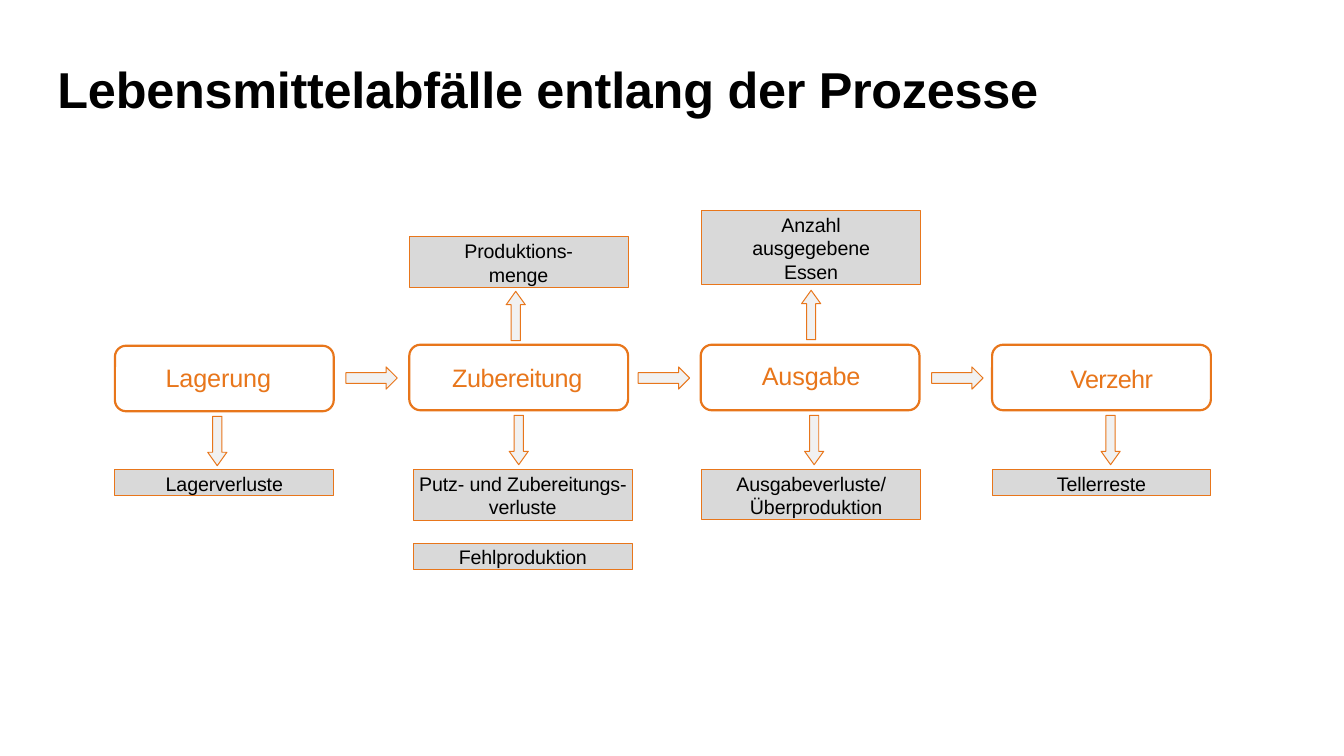
"""Builds a slide on food waste along the kitchen processes."""
from pptx import Presentation
from pptx.dml.color import RGBColor
from pptx.enum.shapes import MSO_SHAPE
from pptx.enum.text import MSO_ANCHOR, PP_ALIGN
from pptx.util import Inches, Pt

ORANGE, GREY, PALE, BLACK = "E8761B", "D9D9D9", "F1F1F1", "000000"
TITLE = "Lebensmittelabfälle entlang der Prozesse"
STEP_WIDTH, STEP_HEIGHT = 2.17, 0.65
STEPS = [
    {"left": 1.14, "top": 3.43, "name": "Lagerung", "label": (1.58, 3.57, 1.15), "spacing": -10},
    {"left": 4.06, "top": 3.42, "name": "Zubereitung", "label": (4.38, 3.57, 1.48), "spacing": -30},
    {"left": 6.95, "top": 3.42, "name": "Ausgabe", "label": (7.5, 3.55, 1.07), "spacing": -10},
    {"left": 9.84, "top": 3.42, "name": "Verzehr", "label": (10.54, 3.58, 0.95), "spacing": -50},
]
NO_INDENT = (0, 0, 0)
NOTES = [
    (1.14, 4.66, 0.26, 1.8, [("Lagerverluste", NO_INDENT)]),
    (4.06, 2.35, 0.5, 1.8, [("Produktions-\nmenge", NO_INDENT)]),
    (4.1, 4.66, 0.5, 1.8, [("Putz- und Zubereitungs-verluste", NO_INDENT)]),
    (4.1, 5.39, 0.26, 1.8, [("Fehlproduktion", NO_INDENT)]),
    (6.96, 2.09, 0.73, 1.6, [("Anzahl", NO_INDENT), ("ausgegebene Essen", (0.4, 0.4, 0))]),
    (6.96, 4.66, 0.49, 1.6, [("Ausgabeverluste/ Überproduktion", (0.3, 0.2, -0.1))]),
    (9.84, 4.66, 0.26, 1.8, [("Tellerreste", NO_INDENT)]),
]
ARROWS = [
    (MSO_SHAPE.RIGHT_ARROW, 0.51, 0.22, 0.5, [(3.43, 3.64), (6.33, 3.64), (9.24, 3.64)]),
    (MSO_SHAPE.DOWN_ARROW, 0.19, 0.49, 0.7,
     [(2.06, 4.13), (5.05, 4.12), (7.98, 4.12), (10.92, 4.12)]),
    (MSO_SHAPE.UP_ARROW, 0.19, 0.49, 0.7, [(5.02, 2.89), (7.95, 2.88)]),
]


def color(value):
    """Turn a hex string into a colour."""
    return RGBColor.from_string(value)


def apply(target, values):
    """Set every attribute in a dict of format values."""
    for name, value in values.items():
        setattr(target, name, value)


def add_shape(page, kind, area, fill, weight):
    """Add an orange-outlined shape without a shadow."""
    shape = page.shapes.add_shape(kind, *map(Inches, area))
    shape.shadow.inherit = False
    if fill:
        shape.fill.solid()
        shape.fill.fore_color.rgb = color(fill)
    else:
        shape.fill.background()
    shape.line.color.rgb = color(ORANGE)
    shape.line.width = Pt(weight)
    return shape


def write(box, lines, size, ink, spacing, before=0, inset=0.02, bold=False,
          align=PP_ALIGN.CENTER):
    """Write paragraphs, each with its left, right and first-line indent."""
    frame = box.text_frame
    apply(frame, {"word_wrap": True, "vertical_anchor": MSO_ANCHOR.TOP,
                  "margin_left": 0, "margin_right": 0,
                  "margin_top": Inches(inset), "margin_bottom": 0})
    for index, (text, indents) in enumerate(lines):
        para = frame.add_paragraph() if index else frame.paragraphs[0]
        para.text = text
        apply(para, {"alignment": align, "space_before": Pt(0 if index else before)})
        for name, indent in zip(("marL", "marR", "indent"), indents):
            para._p.get_or_add_pPr().set(name, str(Inches(indent)))
        for span in para.runs:
            apply(span.font, {"name": "Arial", "size": Pt(size), "bold": bold})
            span.font.color.rgb = color(ink)
            span._r.get_or_add_rPr().set("spc", str(spacing))


def add_text(page, area, *content, **values):
    """Add a text box and write into it."""
    write(page.shapes.add_textbox(*map(Inches, area)), *content, **values)


def main():
    """Draw the title, process steps, notes and arrows."""
    deck = Presentation()
    apply(deck, {"slide_width": Inches(13.33), "slide_height": Inches(7.5)})
    page = deck.slides.add_slide(deck.slide_layouts[6])
    add_text(page, (0.57, 0.58, 9.81, 0.62), [(TITLE, NO_INDENT)], 36, BLACK, -20,
             inset=0, bold=True, align=PP_ALIGN.LEFT)
    for step in STEPS:
        area = (step["left"], step["top"], STEP_WIDTH, STEP_HEIGHT)
        frame = add_shape(page, MSO_SHAPE.ROUNDED_RECTANGLE, area, None, 1.56)
        frame.adjustments[0] = 0.17
        add_text(page, (*step["label"], 0.32), [(step["name"], (0.02, 0, 0))],
                 18, ORANGE, step["spacing"], before=1.2)
    for left, top, height, before, lines in NOTES:
        area = (left, top, STEP_WIDTH, height)
        note = add_shape(page, MSO_SHAPE.RECTANGLE, area, GREY, 0.72)
        write(note, lines, 14, BLACK, -10, before=before)
    for kind, width, height, head, places in ARROWS:
        for left, top in places:
            arrow = add_shape(page, kind, (left, top, width, height), PALE, 0.72)
            arrow.adjustments[0] = 0.48
            arrow.adjustments[1] = head
    deck.save("out.pptx")


if __name__ == "__main__":
    main()
